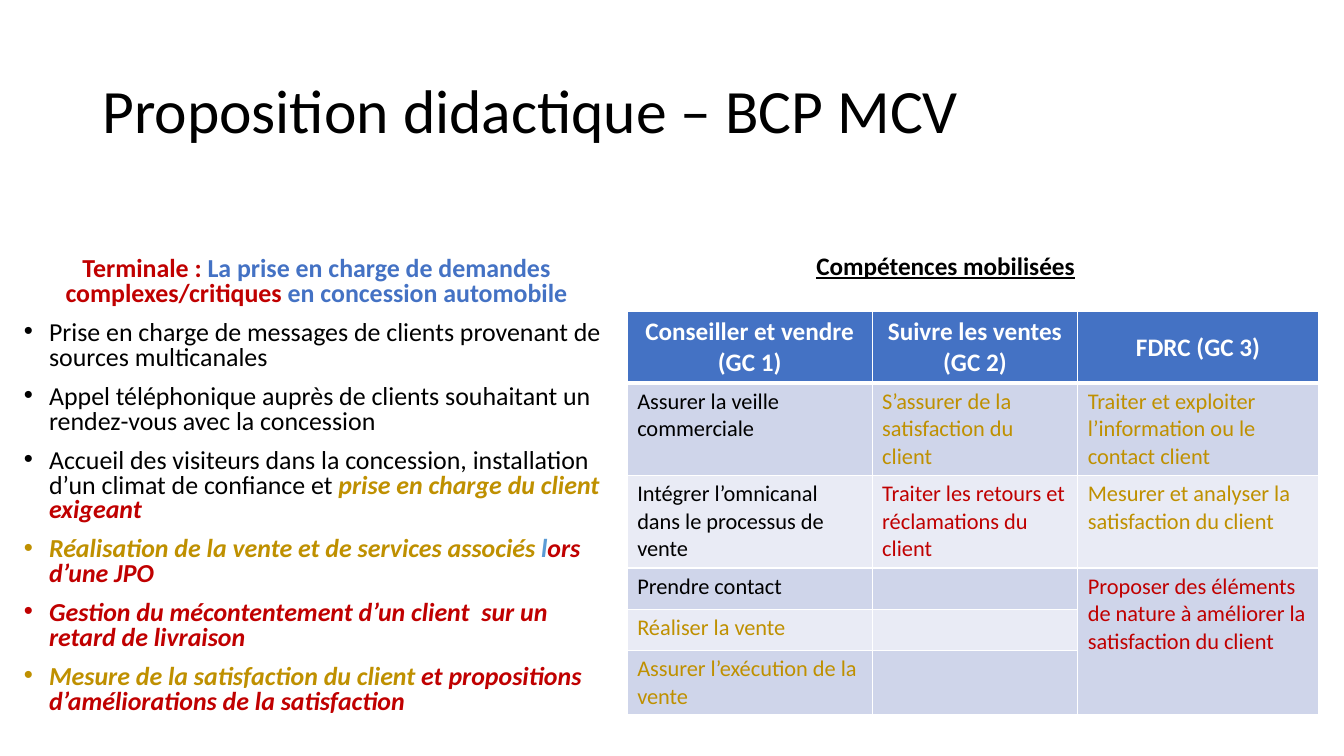
"""Build the teaching proposal slide: class scenario on the left, skills table on the right."""
from lxml.etree import SubElement
from pptx import Presentation
from pptx.dml.color import RGBColor
from pptx.enum.text import MSO_ANCHOR, PP_ALIGN
from pptx.oxml import parse_xml
from pptx.oxml.ns import nsdecls, qn
from pptx.util import Pt

BLACK = RGBColor(0x00, 0x00, 0x00)
WHITE = RGBColor(0xFF, 0xFF, 0xFF)
RED = RGBColor(0xC0, 0x00, 0x00)
GOLD = RGBColor(0xBF, 0x90, 0x00)
BLUE = RGBColor(0x44, 0x72, 0xC4)
SKY = RGBColor(0x5B, 0x9B, 0xD5)
BANDS = [RGBColor(0xCF, 0xD5, 0xEA), RGBColor(0xE9, 0xEB, 0xF5)]
FONT = "Calibri"

TITLE = "Proposition didactique – BCP MCV"
SKILLS_HEADING = "Compétences mobilisées"
SCENARIO_HEADING = [
    ("Terminale : ", RED),
    ("La prise en charge de demandes ", BLUE),
    ("complexes/critiques ", RED),
    ("en concession automobile", BLUE),
]
SCENARIO_STEPS = [
    [("Prise en charge de messages de clients provenant de sources multicanales", BLACK)],
    [("Appel téléphonique auprès de clients souhaitant un rendez-vous avec la concession", BLACK)],
    [("Accueil des visiteurs dans la concession, installation d’un climat de confiance et ", BLACK),
     ("prise en charge du client ", GOLD), ("exigeant", RED)],
    [("Réalisation de la vente et de services associés ", GOLD), ("l", SKY), ("ors d’une JPO", RED)],
    [("Gestion du mécontentement d’un client  sur un retard de livraison", RED)],
    [("Mesure de la satisfaction du client ", GOLD),
     ("et propositions d’améliorations de la satisfaction", RED)],
]
SKILL_GROUPS = ["Conseiller et vendre (GC 1)", "Suivre les ventes (GC 2)", "FDRC (GC 3)"]
SKILLS = [
    [("Assurer la veille commerciale", BLACK), ("S’assurer de la satisfaction du client", GOLD),
     ("Traiter et exploiter l’information ou le contact client", GOLD)],
    [("Intégrer l’omnicanal dans le processus de vente", BLACK),
     ("Traiter les retours et réclamations du client", RED),
     ("Mesurer et analyser la satisfaction du client", GOLD)],
    [("Prendre contact", BLACK), None,
     ("Proposer des éléments de nature à améliorer la satisfaction du client", RED)],
    [("Réaliser la vente", GOLD), None, None],
    [("Assurer l’exécution de la vente", GOLD), None, None],
]
COLUMN_WIDTHS = [175, 146.9, 171.7]
ROW_HEIGHTS = [51, 66, 66, 29.5, 29.5, 45]


def add_run(paragraph, text, size, color, bold=False, italic=False):
    run = paragraph.add_run()
    run.text = text
    font = run.font
    font.name, font.size, font.bold, font.italic = FONT, Pt(size), bold, italic
    font.color.rgb = color
    return run


def add_frame(slide, left, top, width, height):
    frame = slide.shapes.add_textbox(Pt(left), Pt(top), Pt(width), Pt(height)).text_frame
    frame.word_wrap = True
    return frame


def add_bullet(paragraph):
    properties = paragraph._p.get_or_add_pPr()
    properties.set("marL", str(Pt(18)))
    properties.set("indent", str(Pt(-18)))
    SubElement(properties, qn("a:buFont"), typeface="Arial")
    SubElement(properties, qn("a:buChar"), char="•")


def add_borders(cell, top, bottom):
    properties = cell._tc.get_or_add_tcPr()
    for place, (side, width) in enumerate([("L", 1), ("R", 1), ("T", top), ("B", bottom)]):
        properties.insert(place, parse_xml(
            f'<a:ln{side} {nsdecls("a")} w="{Pt(width)}"><a:solidFill>'
            f'<a:srgbClr val="{WHITE}"/></a:solidFill></a:ln{side}>'))


def add_scenario(slide):
    frame = add_frame(slide, 10, 180.7, 432, 347)
    for number, parts in enumerate([SCENARIO_HEADING] + SCENARIO_STEPS):
        paragraph = frame.add_paragraph() if number else frame.paragraphs[0]
        paragraph.line_spacing = 0.8
        paragraph.space_before = Pt(10)
        if number:
            add_bullet(paragraph)
        else:
            paragraph.alignment = PP_ALIGN.CENTER
        for text, color in parts:
            add_run(paragraph, text, 18.5, color,
                    bold=not number or color != BLACK, italic=number > 0 and color != BLACK)


def add_skills(slide):
    table = slide.shapes.add_table(
        len(ROW_HEIGHTS), len(COLUMN_WIDTHS), Pt(448), Pt(222.7),
        Pt(sum(COLUMN_WIDTHS)), Pt(sum(ROW_HEIGHTS))).table
    for column, width in zip(table.columns, COLUMN_WIDTHS):
        column.width = Pt(width)
    for row, height in zip(table.rows, ROW_HEIGHTS):
        row.height = Pt(height)
    header = [(group, WHITE) for group in SKILL_GROUPS]
    for r, skills in enumerate([header] + SKILLS):
        for c, skill in enumerate(skills):
            cell = table.cell(r, c)
            cell.fill.solid()
            cell.fill.fore_color.rgb = BANDS[(r - 1) % 2] if r else BLUE
            add_borders(cell, top=3 if r == 1 else 1, bottom=1 if r else 3)
            paragraph = cell.text_frame.paragraphs[0]
            if not r:
                cell.vertical_anchor = MSO_ANCHOR.MIDDLE
                paragraph.alignment = PP_ALIGN.CENTER
            if skill:
                text, color = skill
                add_run(paragraph, text, 16 if r else 18, color, bold=not r)
            else:
                paragraph.font.size = Pt(16)
    table.cell(3, 2).merge(table.cell(5, 2))


def main():
    presentation = Presentation()
    presentation.slide_width, presentation.slide_height = Pt(960), Pt(540)
    slide = presentation.slides.add_slide(presentation.slide_layouts[6])

    title = add_frame(slide, 66, 28.8, 828, 104.4)
    title.vertical_anchor = MSO_ANCHOR.MIDDLE
    title.paragraphs[0].line_spacing = 0.9
    add_run(title.paragraphs[0], TITLE, 44, BLACK)

    add_scenario(slide)
    add_skills(slide)

    skills_heading = add_frame(slide, 576, 175, 237.6, 29)
    add_run(skills_heading.paragraphs[0], SKILLS_HEADING, 18, BLACK, bold=True).font.underline = True

    presentation.save("out.pptx")


if __name__ == "__main__":
    main()
